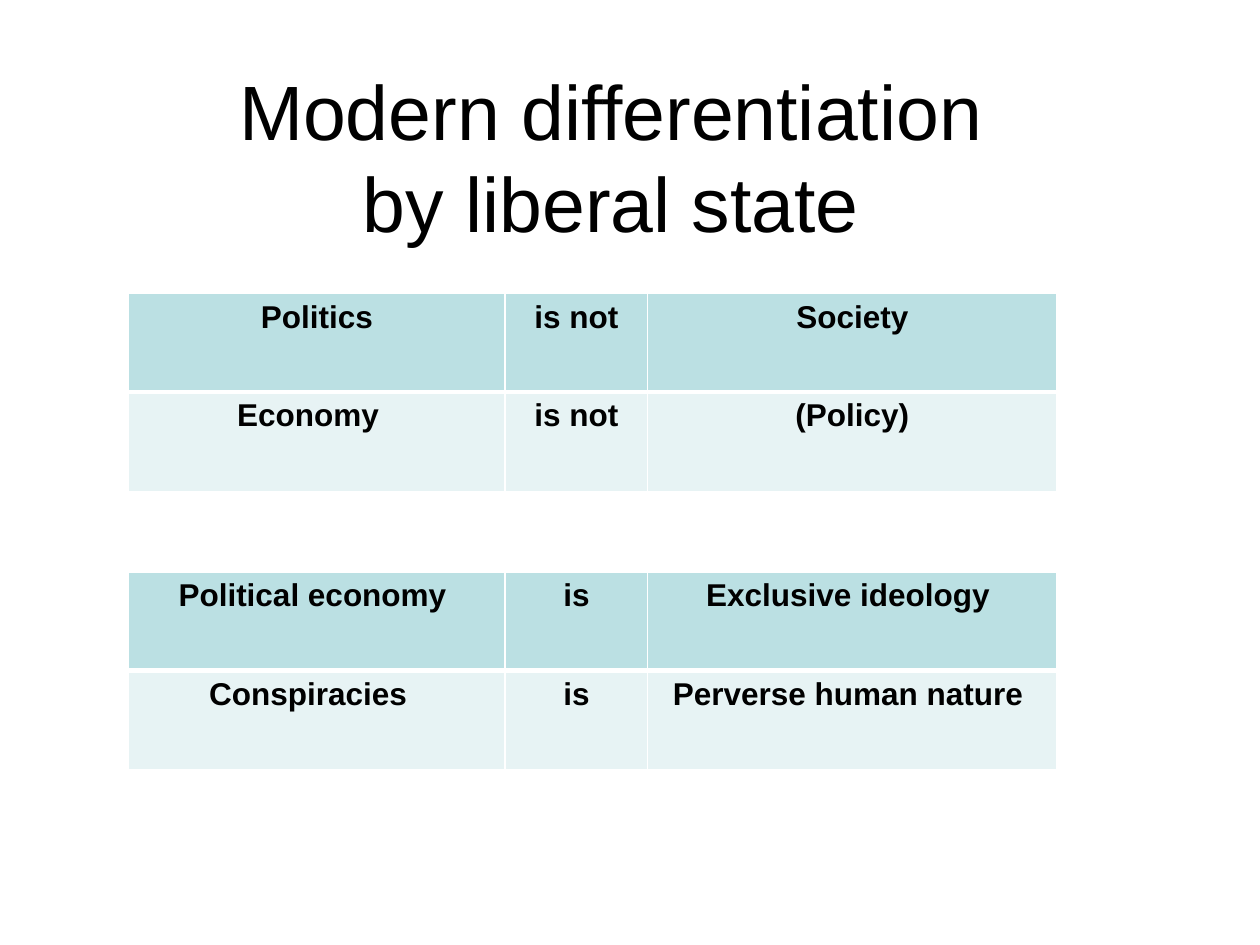
"""Build a slide with two tables on the liberal state's differentiation."""
import pptx
import pptx.dml.color
import pptx.enum.text
import pptx.oxml
import pptx.oxml.ns
import pptx.util

THEME = {
    "font": "Arial", "ink": "000000", "line": "FFFFFF",
    "fills": ("BBE0E3", "E7F3F4"), "title": 44, "body": 18,
}
COLS = (2.99, 1.13, 3.25)
ROWS = (0.78, 0.79)
LEFT, TOP, STEP = 1.02, 2.33, 2.21
PAD, NUDGE = 0.1, 0.07
inch = pptx.util.Inches
tint = pptx.dml.color.RGBColor.from_string


def write(frame, text, size, bold=False):
    frame.text = text
    para = frame.paragraphs[0]
    para.alignment = pptx.enum.text.PP_ALIGN.CENTER
    for run in para.runs:
        run.font.name = THEME["font"]
        run.font.size = pptx.util.Pt(size)
        run.font.bold = bold
        run.font.color.rgb = tint(THEME["ink"])


def edge(cell, side, width):
    line = pptx.oxml.parse_xml(
        f'<a:ln{side} {pptx.oxml.ns.nsdecls("a")} w="{pptx.util.Pt(width)}">'
        f'<a:solidFill><a:srgbClr val="{THEME["line"]}"/></a:solidFill></a:ln{side}>')
    cell._tc.get_or_add_tcPr().append(line)


deck = pptx.Presentation()
deck.slide_width, deck.slide_height = inch(10), inch(7.5)
slide = deck.slides.add_slide(deck.slide_layouts[5])

title = slide.shapes.title
title.left, title.top = inch(0.35), inch(0.61)
title.width, title.height = inch(9), inch(1.25)
title.text_frame.auto_size = pptx.enum.text.MSO_AUTO_SIZE.NONE
title.text_frame.vertical_anchor = pptx.enum.text.MSO_ANCHOR.MIDDLE
write(title.text_frame, "Modern differentiation\vby liberal state", THEME["title"])

tables = (
    ((("Politics", 0), ("is not", 0), ("Society", 0)),
     (("Economy", 2), ("is not", 0), ("(Policy)", 0))),
    ((("Political economy", 1), ("is", 0), ("Exclusive ideology", 1)),
     (("Conspiracies", 2), ("is", 0), ("Perverse human nature", 1))),
)
for place, data in enumerate(tables):
    table = slide.shapes.add_table(
        len(ROWS), len(COLS), inch(LEFT), inch(TOP + place * STEP),
        inch(sum(COLS)), inch(sum(ROWS))).table
    for col, width in zip(table.columns, COLS):
        col.width = inch(width)
    for r, (row, height) in enumerate(zip(data, ROWS)):
        table.rows[r].height = inch(height)
        for c, (text, shift) in enumerate(row):
            cell = table.cell(r, c)
            cell.margin_right = inch(PAD + shift * NUDGE)
            for side in "LRTB":
                edge(cell, side, 3 if (r, side) in ((0, "B"), (1, "T")) else 1)
            cell.fill.solid()
            cell.fill.fore_color.rgb = tint(THEME["fills"][r])
            write(cell.text_frame, text, THEME["body"], bold=True)

deck.save("out.pptx")
